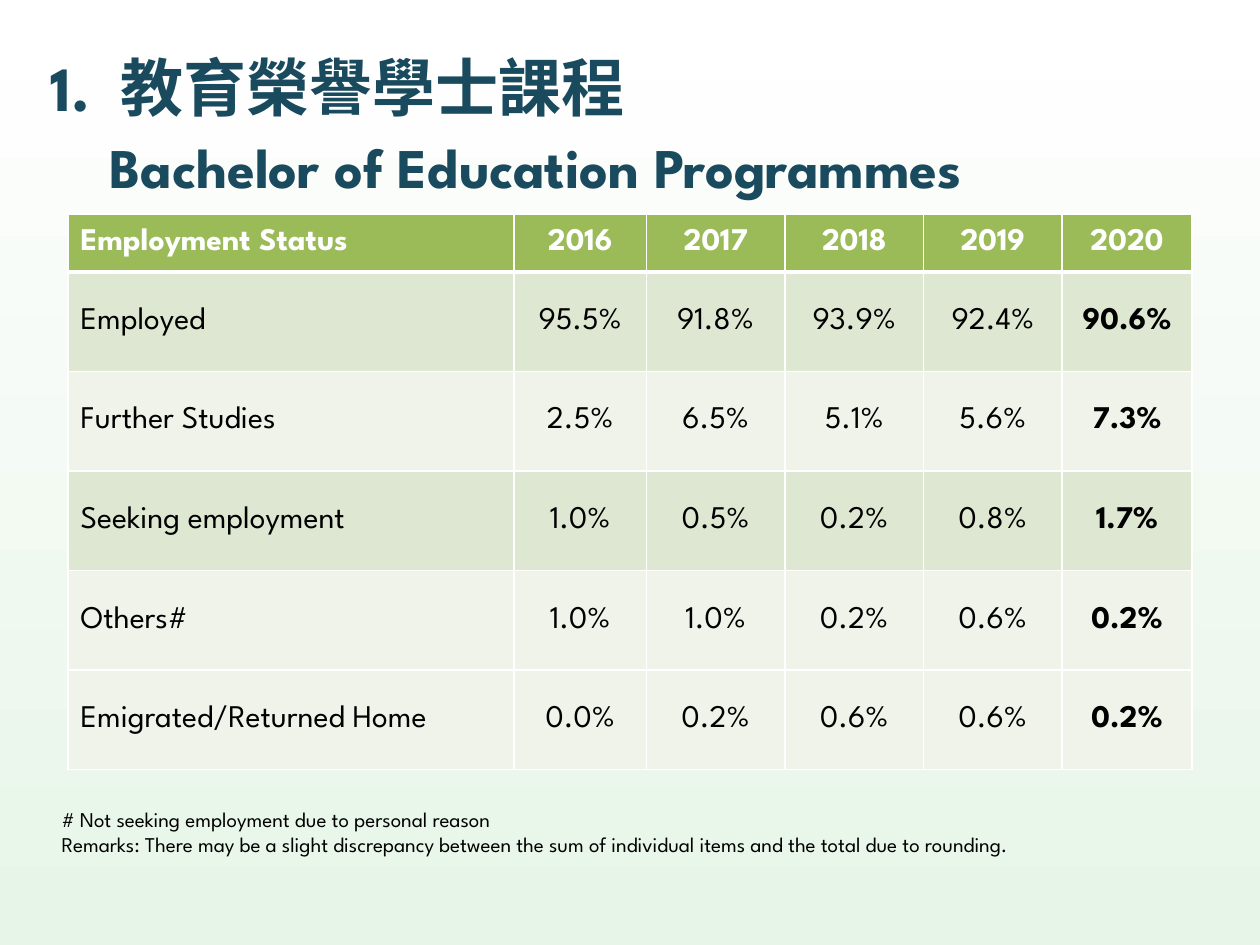
"""Build the Bachelor of Education employment status slide."""
from dataclasses import dataclass

from lxml.etree import SubElement
from pptx import Presentation
from pptx.dml.color import RGBColor
from pptx.enum.text import MSO_ANCHOR as Anchor, PP_ALIGN as Align
from pptx.oxml.ns import qn
from pptx.util import Inches, Pt

FONT = "League Spartan"
WHITE, BLACK, TEAL, GREEN = "FFFFFF", "000000", "1A4A5D", "9BBB59"
DARK_BAND, LIGHT_BAND = "DEE7D1", "EFF3EA"
COLUMN_WIDTHS = (3.54, 1.05, 1.1, 1.1, 1.1, 1.03)
HEADER_HEIGHT, ROW_HEIGHT = 0.46, 0.79


@dataclass(frozen=True)
class TextStyle:
    size: float
    color: str
    bold: bool = False


@dataclass(frozen=True)
class StatusRow:
    label: str
    values: tuple[str, ...]
    fill: str


HEADER = StatusRow("Employment Status", ("2016", "2017", "2018", "2019", "2020"), GREEN)
STATUS_ROWS = (
    StatusRow("Employed", ("95.5%", "91.8%", "93.9%", "92.4%", "90.6%"), DARK_BAND),
    StatusRow("Further Studies", ("2.5%", "6.5%", "5.1%", "5.6%", "7.3%"), LIGHT_BAND),
    StatusRow("Seeking employment", ("1.0%", "0.5%", "0.2%", "0.8%", "1.7%"), DARK_BAND),
    StatusRow("Others#", ("1.0%", "1.0%", "0.2%", "0.6%", "0.2%"), LIGHT_BAND),
    StatusRow("Emigrated/Returned Home", ("0.0%", "0.2%", "0.6%", "0.6%", "0.2%"), LIGHT_BAND),
)
NOTES = (
    "# Not seeking employment due to personal reason",
    "Remarks: There may be a slight discrepancy between the sum of individual items "
    "and the total due to rounding.",
)


def rgb(color: str) -> RGBColor:
    return RGBColor.from_string(color)


def add_run(paragraph, text: str, style: TextStyle) -> None:
    run = paragraph.add_run()
    run.text = text
    run.font.name = FONT
    run.font.size = Pt(style.size)
    run.font.bold = style.bold
    run.font.color.rgb = rgb(style.color)


def add_text_frame(slide, left: float, top: float, width: float, height: float):
    shape = slide.shapes.add_textbox(Inches(left), Inches(top), Inches(width), Inches(height))
    shape.text_frame.word_wrap = True
    return shape.text_frame


def paint_background(slide) -> None:
    fill = slide.background.fill
    fill.gradient()
    fill.gradient_angle = 270
    for stop, color in zip(fill.gradient_stops, (WHITE, "E7F5E8")):
        stop.color.rgb = rgb(color)


def add_title(slide) -> None:
    frame = add_text_frame(slide, 0.31, 0.31, 9.45, 1.5)
    frame.margin_left = Inches(0.09)
    chinese = frame.paragraphs[0]
    chinese.line_spacing = Pt(45)
    tabs = SubElement(chinese._p.get_or_add_pPr(), qn("a:tabLst"))
    SubElement(tabs, qn("a:tab"), pos=str(Inches(0.56)), algn="l")
    add_run(chinese, "1.\t教育榮譽學士課程", TextStyle(36, TEAL, True))
    english = frame.add_paragraph()
    english.line_spacing = Pt(43)
    english._p.get_or_add_pPr().set("marL", str(Inches(0.47)))
    add_run(english, "Bachelor of Education Programmes", TextStyle(32, TEAL, True))


def set_borders(cell, top: float, bottom: float) -> None:
    properties = cell._tc.get_or_add_tcPr()
    widths = {"a:lnL": 1, "a:lnR": 1, "a:lnT": top, "a:lnB": bottom}
    for position, (tag, width) in enumerate(widths.items()):
        line = SubElement(properties, qn(tag), w=str(Pt(width)))
        SubElement(SubElement(line, qn("a:solidFill")), qn("a:srgbClr"), val=WHITE)
        properties.insert(position, line)


def fill_row(table, index: int, row: StatusRow) -> None:
    is_header = index == 0
    texts = (row.label, *row.values)
    for column, text in enumerate(texts):
        cell = table.cell(index, column)
        cell.fill.solid()
        cell.fill.fore_color.rgb = rgb(row.fill)
        cell.vertical_anchor = Anchor.MIDDLE
        set_borders(cell, top=3 if index == 1 else 1, bottom=3 if is_header else 1)
        paragraph = cell.text_frame.paragraphs[0]
        paragraph.alignment = Align.CENTER if column else Align.LEFT
        is_bold = is_header or column == len(texts) - 1
        add_run(paragraph, text, TextStyle(18, WHITE if is_header else BLACK, is_bold))


def add_status_table(slide) -> None:
    rows = (HEADER, *STATUS_ROWS)
    height = HEADER_HEIGHT + ROW_HEIGHT * len(STATUS_ROWS)
    table = slide.shapes.add_table(
        len(rows), len(COLUMN_WIDTHS),
        Inches(0.54), Inches(1.7), Inches(sum(COLUMN_WIDTHS)), Inches(height),
    ).table
    for column, width in zip(table.columns, COLUMN_WIDTHS):
        column.width = Inches(width)
    for index, row in enumerate(rows):
        table.rows[index].height = Inches(ROW_HEIGHT if index else HEADER_HEIGHT)
        fill_row(table, index, row)


def add_notes(slide) -> None:
    frame = add_text_frame(slide, 0.39, 6.35, 9.21, 0.5)
    for index, note in enumerate(NOTES):
        paragraph = frame.add_paragraph() if index else frame.paragraphs[0]
        add_run(paragraph, note, TextStyle(12, BLACK))


def main() -> None:
    presentation = Presentation()
    presentation.slide_width = Inches(10)
    presentation.slide_height = Inches(7.5)
    slide = presentation.slides.add_slide(presentation.slide_layouts[6])
    paint_background(slide)
    add_title(slide)
    add_status_table(slide)
    add_notes(slide)
    presentation.save("out.pptx")


if __name__ == "__main__":
    main()
